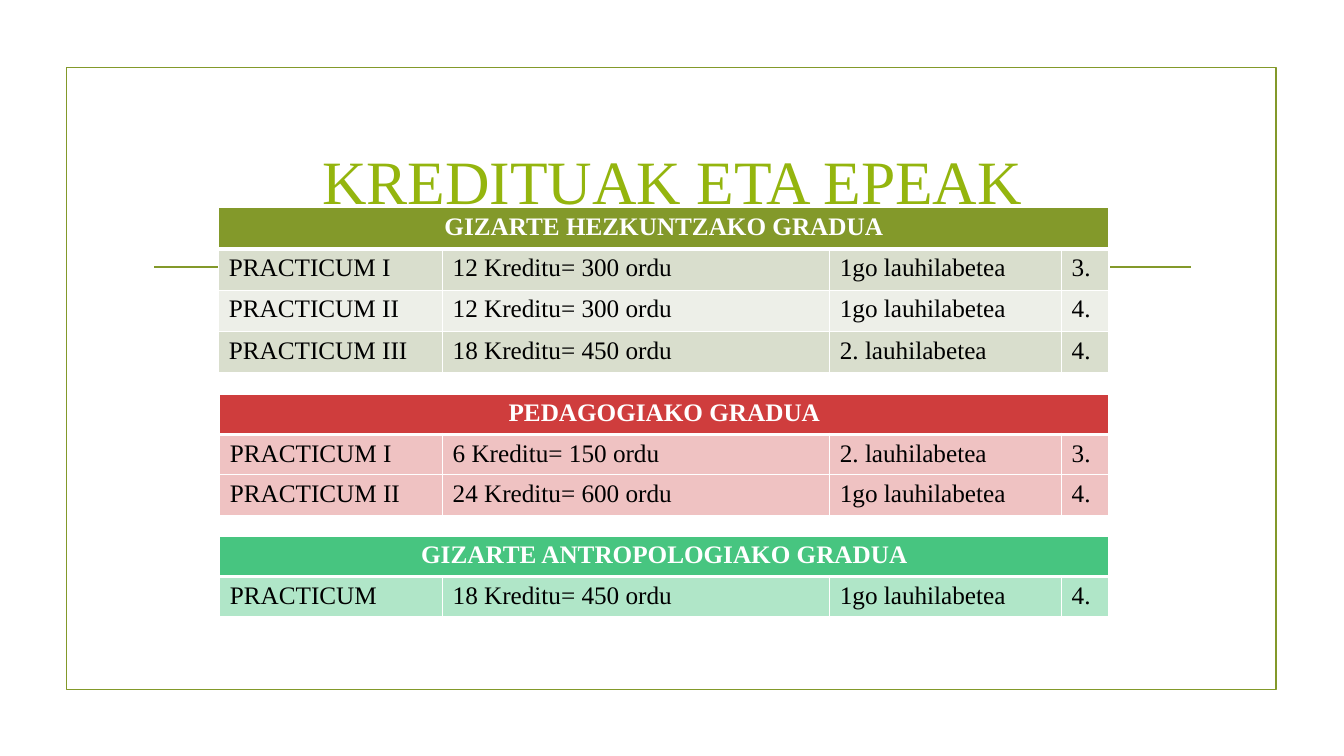
from lxml.etree import SubElement
from pptx import Presentation
from pptx.dml.color import RGBColor
from pptx.enum.shapes import MSO_CONNECTOR, MSO_SHAPE
from pptx.enum.text import MSO_ANCHOR, PP_ALIGN
from pptx.oxml.ns import qn
from pptx.util import Inches, Pt

FONT = "Times New Roman"
OLIVE = "83992A"


def rgb(hex_color):
    return RGBColor.from_string(hex_color)


def style_cell(cell, color, opacity, top_width, bottom_width):
    """Give the cell white borders (points) and a fill (opacity in percent)."""
    cell_props = cell._tc.get_or_add_tcPr()
    widths = {"a:lnL": 1, "a:lnR": 1, "a:lnT": top_width, "a:lnB": bottom_width}
    for side, width in widths.items():
        border = SubElement(cell_props, qn(side), w=str(Pt(width)))
        SubElement(SubElement(border, qn("a:solidFill")), qn("a:srgbClr"), val="FFFFFF")
    fill = SubElement(cell_props, qn("a:solidFill"))
    fill_color = SubElement(fill, qn("a:srgbClr"), val=color)
    if opacity < 100:
        SubElement(fill_color, qn("a:alpha"), val=str(opacity * 1000))


prs = Presentation()
prs.slide_width = Inches(13.33)
prs.slide_height = Inches(7.5)
slide = prs.slides.add_slide(prs.slide_layouts[6])

frame = slide.shapes.add_shape(
    MSO_SHAPE.RECTANGLE, Inches(0.66), Inches(0.67), Inches(12), Inches(6.17))
frame.shadow.inherit = False
frame.fill.background()
frame.line.color.rgb = rgb(OLIVE)
frame.line.width = Pt(1.25)

divider = slide.shapes.add_connector(
    MSO_CONNECTOR.STRAIGHT, Inches(1.53), Inches(2.65), Inches(11.81), Inches(2.65))
divider.line.color.rgb = rgb(OLIVE)
divider.line.width = Pt(1.25)
SubElement(divider._element.spPr, qn("a:effectLst"))

title = slide.shapes.add_textbox(Inches(1.42), Inches(1.07), Inches(10.5), Inches(1.43))
title.text_frame.word_wrap = True
title.text_frame.vertical_anchor = MSO_ANCHOR.MIDDLE
title_line = title.text_frame.paragraphs[0]
title_line.alignment = PP_ALIGN.CENTER
title_run = title_line.add_run()
title_run.text = "KREDITUAK ETA EPEAK"
title_run.font.name = FONT
title_run.font.size = Pt(44)
title_run.font.color.rgb = rgb("94B50E")

# Degree, left, top, row height, header fill, alternating body fills, practicums
degrees = [
    ("GIZARTE HEZKUNTZAKO GRADUA", 2.17, 2.06, 0.41,
     (OLIVE, 100), [("D9DECD", 100), ("EDEFE8", 100)],
     [("PRACTICUM I", "12 Kreditu= 300 ordu", "1go lauhilabetea", "3."),
      ("PRACTICUM II", "12 Kreditu= 300 ordu", "1go lauhilabetea", "4."),
      ("PRACTICUM III", "18 Kreditu= 450 ordu", "2. lauhilabetea", "4.")]),
    ("PEDAGOGIAKO GRADUA", 2.18, 3.91, 0.4,
     ("C00000", 76), [("C00000", 24)],
     [("PRACTICUM I", "6 Kreditu= 150 ordu", "2. lauhilabetea", "3."),
      ("PRACTICUM II", "24 Kreditu= 600 ordu", "1go lauhilabetea", "4.")]),
    ("GIZARTE ANTROPOLOGIAKO GRADUA", 2.18, 5.32, 0.4,
     ("00B050", 72), [("00B050", 31)],
     [("PRACTICUM", "18 Kreditu= 450 ordu", "1go lauhilabetea", "4.")]),
]
RIGHT_EDGE = 11
LATER_COLUMNS = [3.84, 2.3, 0.47]

for degree, left, top, row_height, header_fill, body_fills, practicums in degrees:
    rows = [(degree, "", "", "")] + practicums
    width = RIGHT_EDGE - left
    table = slide.shapes.add_table(
        len(rows), 4, Inches(left), Inches(top),
        Inches(width), Inches(row_height * len(rows))).table
    table.first_row = False
    table.horz_banding = False
    for column, column_width in zip(table.columns, [width - sum(LATER_COLUMNS)] + LATER_COLUMNS):
        column.width = Inches(column_width)
    table.cell(0, 0).merge(table.cell(0, 3))

    for r, row in enumerate(rows):
        table.rows[r].height = Inches(row_height)
        is_header = r == 0
        color, opacity = header_fill if is_header else body_fills[(r - 1) % len(body_fills)]
        for c, text in enumerate(row):
            cell = table.cell(r, c)
            style_cell(cell, color, opacity, 3 if r == 1 else 1, 3 if is_header else 1)
            if not text:
                continue
            paragraph = cell.text_frame.paragraphs[0]
            paragraph.alignment = PP_ALIGN.CENTER if is_header else PP_ALIGN.LEFT
            run = paragraph.add_run()
            run.text = text
            run.font.name = FONT
            run.font.size = Pt(18)
            run.font.bold = is_header
            run.font.color.rgb = rgb("FFFFFF" if is_header else "000000")

prs.save("out.pptx")
